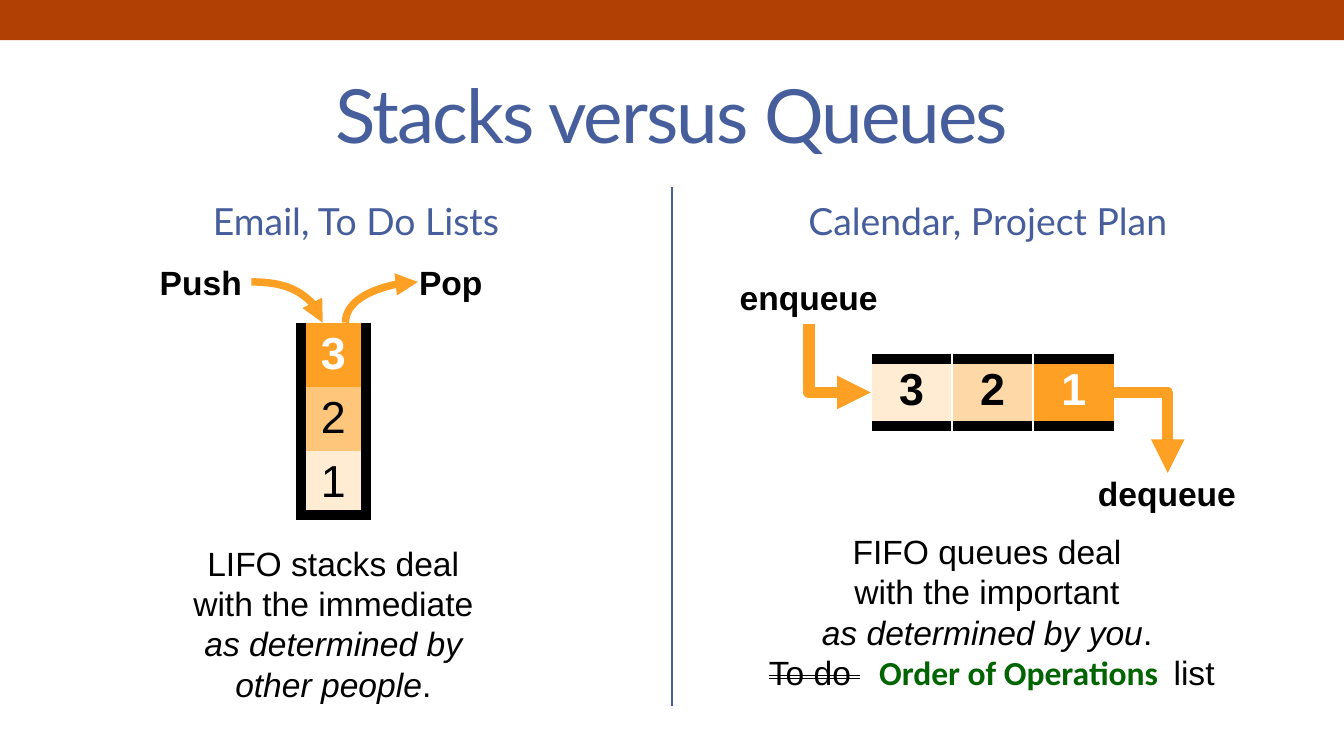
from lxml.etree import SubElement
from pptx import Presentation
from pptx.dml.color import RGBColor
from pptx.enum.shapes import MSO_CONNECTOR, MSO_SHAPE
from pptx.enum.text import MSO_ANCHOR, MSO_AUTO_SIZE, PP_ALIGN
from pptx.oxml import parse_xml
from pptx.oxml.ns import nsdecls, qn
from pptx.util import Cm, Pt

RUST = RGBColor(0xB0, 0x40, 0x04)
BLUE = RGBColor(0x46, 0x5E, 0x9C)
ORANGE = RGBColor(0xFD, 0xA0, 0x23)
MID_ORANGE = RGBColor(0xFE, 0xC6, 0x7B)
LIGHT_ORANGE = RGBColor(0xFE, 0xD9, 0xA7)
CREAM = RGBColor(0xFF, 0xEC, 0xD3)
GREEN = RGBColor(0x00, 0x64, 0x00)
BLACK = RGBColor(0, 0, 0)
WHITE = RGBColor(0xFF, 0xFF, 0xFF)

PLAIN_TABLE = "{2D5ABB26-0587-4C30-8999-92F81FD0307C}"
BODY = {"name": "Arial", "size": Pt(18), "bold": False}
LABEL = BODY | {"bold": True}
ITALIC = BODY | {"italic": True}
HEADING = {"name": "Lato", "size": Pt(20), "bold": False}
TITLE = HEADING | {"size": Pt(40)}
NUMBER = {"name": "Arial", "size": Pt(24)}
THICK = (BLACK, 6)
THIN = (WHITE, 1)


def apply(target, formats):
    for name, value in formats.items():
        setattr(target, name, value)


def place(shape, left, top, width, height):
    apply(shape, {"left": Cm(left), "top": Cm(top), "width": Cm(width), "height": Cm(height)})


def add_span(para, text, formats, color=BLACK):
    for number, line in enumerate(text.split("\n")):
        if number:
            para.add_line_break()
        if line:
            span = para.add_run()
            span.text = line
            apply(span.font, formats)
            span.font.color.rgb = color
    return span


def fill_placeholder(box, position, text, formats):
    place(box, *position)
    apply(box.text_frame, {"auto_size": MSO_AUTO_SIZE.NONE, "vertical_anchor": MSO_ANCHOR.MIDDLE})
    para = box.text_frame.paragraphs[0]
    para.alignment = PP_ALIGN.CENTER
    return add_span(para, text, formats, BLUE)


def add_text(page, position, formats):
    box = page.shapes.add_textbox(*map(Cm, position))
    apply(box.text_frame, {"word_wrap": True, "auto_size": MSO_AUTO_SIZE.SHAPE_TO_FIT_TEXT})
    para = box.text_frame.paragraphs[0]
    apply(para, formats)
    return para


def add_line(page, kind, start, end, color, width, arrow=None):
    line = page.shapes.add_connector(kind, *map(Cm, start + end))
    line.line.color.rgb = color
    line.line.width = Pt(width)
    properties = line._element.spPr
    if kind != MSO_CONNECTOR.STRAIGHT:
        geometry = properties.find(qn("a:prstGeom"))
        geometry.set("prst", geometry.get("prst").replace("3", "2"))
    if arrow:
        SubElement(properties.find(qn("a:ln")), qn(f"a:{arrow}"), type="triangle")
    SubElement(properties, qn("a:effectLst"))


def add_borders(cell, borders):
    for index, (side, (color, width)) in enumerate(borders.items()):
        border = parse_xml(
            f'<a:ln{side} {nsdecls("a")} w="{Pt(width)}"><a:solidFill>'
            f'<a:srgbClr val="{color}"/></a:solidFill></a:ln{side}>'
        )
        cell._tc.get_or_add_tcPr().insert(index, border)


def add_boxes(page, position, rows, columns, items, borders, last_borders):
    table = page.shapes.add_table(rows, columns, *map(Cm, position)).table
    apply(table, {"first_row": False, "horz_banding": False})
    table._tbl.tblPr.find(qn("a:tableStyleId")).text = PLAIN_TABLE
    for cell, (text, fill, color, bold) in zip(table.iter_cells(), items):
        cell.fill.solid()
        cell.fill.fore_color.rgb = fill
        para = cell.text_frame.paragraphs[0]
        para.alignment = PP_ALIGN.CENTER
        add_span(para, text, NUMBER | {"bold": bold}, color)
        add_borders(cell, last_borders if text == items[-1][0] else borders)


def add_headings(page):
    title, left, left_list, right, right_list = page.placeholders
    span = fill_placeholder(title, (1.27, 1.12, 22.86, 2.06), "Stacks versus Queues", TITLE)
    span._r.get_or_add_rPr().set("spc", "-100")
    fill_placeholder(left, (1.27, 3.51, 10.92, 1.32), "Email, To Do Lists", HEADING)
    fill_placeholder(right, (13.21, 3.51, 10.92, 1.32), "Calendar, Project Plan", HEADING)
    for unused in (left_list, right_list):
        unused._element.getparent().remove(unused._element)


def add_frame(page):
    bar = page.shapes.add_shape(MSO_SHAPE.RECTANGLE, 0, 0, Cm(25.4), Cm(0.76))
    bar.shadow.inherit = False
    bar.fill.solid()
    bar.fill.fore_color.rgb = RUST
    bar.line.fill.background()
    add_line(page, MSO_CONNECTOR.STRAIGHT, (12.7, 3.53), (12.7, 13.34), BLUE, 1.5)


def add_stack(page):
    items = [("3", ORANGE, WHITE, True), ("2", MID_ORANGE, BLACK, False), ("1", CREAM, BLACK, False)]
    sides = {"L": THICK, "R": THICK}
    add_boxes(page, (5.69, 6.1, 1.22, 3.63), 3, 1, items, sides, sides | {"B": THICK})
    add_span(add_text(page, (2.77, 4.83, 2.18, 1.02), {}), "Push", LABEL)
    add_span(add_text(page, (7.67, 4.83, 2.01, 1.02), {}), "Pop", LABEL)
    add_line(page, MSO_CONNECTOR.CURVE, (4.75, 5.33), (6.1, 6.1), ORANGE, 4, "tailEnd")
    add_line(page, MSO_CONNECTOR.CURVE, (7.9, 5.33), (6.53, 6.1), ORANGE, 4, "headEnd")
    para = add_text(page, (3.25, 10.13, 6.1, 3.33), {"alignment": PP_ALIGN.CENTER})
    add_span(para, "LIFO stacks deal\nwith the immediate ", BODY)
    add_span(para, "as determined by other people", ITALIC)
    add_span(para, ".", BODY)


def add_queue(page):
    items = [("3", CREAM, BLACK, True), ("2", LIGHT_ORANGE, BLACK, True), ("1", ORANGE, WHITE, True)]
    sides = {"L": THIN, "R": THIN, "T": THICK, "B": THICK}
    add_boxes(page, (16.46, 6.78, 4.6, 1.22), 1, 3, items, sides, sides)
    spacing = {"line_spacing": Pt(18)}
    enqueue = add_text(page, (13.67, 5.23, 3.23, 0.89), spacing | {"alignment": PP_ALIGN.CENTER})
    add_span(enqueue, "enqueue", LABEL)
    add_span(add_text(page, (20.5, 8.94, 3.18, 0.89), spacing), "dequeue", LABEL)
    add_line(page, MSO_CONNECTOR.ELBOW, (16.46, 7.42), (15.29, 6.12), ORANGE, 6, "headEnd")
    add_line(page, MSO_CONNECTOR.ELBOW, (21.06, 7.42), (22.07, 8.94), ORANGE, 6, "tailEnd")
    para = add_text(page, (13.74, 9.91, 9.83, 3.33), {"alignment": PP_ALIGN.CENTER})
    add_span(para, "FIFO queues deal\nwith the important\n", BODY)
    add_span(para, "as determined by you", ITALIC)
    add_span(para, ".\n  ", BODY)
    struck = add_span(para, "To do ", BODY)
    struck._r.get_or_add_rPr().set("strike", "dblStrike")
    add_span(para, "  ", BODY)
    add_span(para, "Order of Operations  ", LABEL | {"name": "Calibri"}, GREEN)
    add_span(para, "list ", BODY)


def main():
    deck = Presentation()
    apply(deck, {"slide_width": Cm(25.4), "slide_height": Cm(14.29)})
    page = deck.slides.add_slide(deck.slide_layouts.get_by_name("Comparison"))
    add_frame(page)
    add_headings(page)
    add_stack(page)
    add_queue(page)
    deck.save("out.pptx")


if __name__ == "__main__":
    main()
